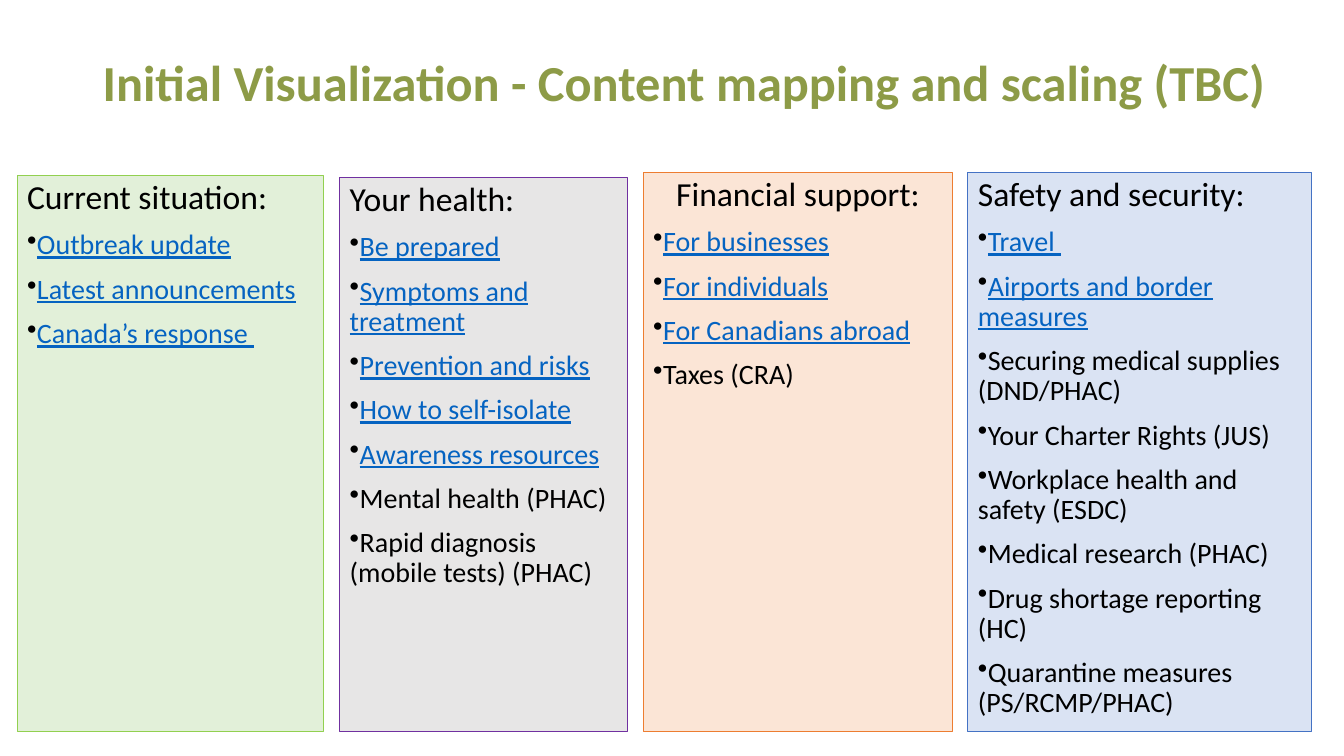
from lxml import etree
from pptx import Presentation
from pptx.dml.color import RGBColor
from pptx.enum.shapes import MSO_SHAPE
from pptx.enum.text import MSO_ANCHOR, PP_ALIGN
from pptx.oxml.ns import qn
from pptx.util import Inches, Pt

RECTANGLE = MSO_SHAPE.RECTANGLE
TOP, MIDDLE = MSO_ANCHOR.TOP, MSO_ANCHOR.MIDDLE
LEFT, CENTER = PP_ALIGN.LEFT, PP_ALIGN.CENTER

COLORS = {
    "title": "8D9B47", "text": "000000", "link": "0563C1",
    "green": "E2F0D9", "green line": "92D050",
    "gray": "E7E6E6", "gray line": "7030A0",
    "orange": "FBE5D6", "orange line": "ED7D31",
    "blue": "DAE3F3", "blue line": "4472C4",
}
FONTS = {
    "title": {"size": Pt(36), "bold": True},
    "heading": {"size": Pt(24)},
    "item": {"size": Pt(20)},
    "link": {"size": Pt(20), "underline": True},
}
COLUMN_BOTTOM = 7.26

# Each column: left, top, width, color, heading, heading alignment, linked topics, planned topics
COLUMNS = [
    (0.17, 1.74, 3.04, "green", "Current situation:", LEFT,
     ["Outbreak update", "Latest announcements", "Canada’s response "], []),
    (3.37, 1.76, 2.85, "gray", "Your health:", LEFT,
     ["Be prepared", "Symptoms and treatment", "Prevention and risks",
      "How to self-isolate", "Awareness resources"],
     ["Mental health (PHAC)", "Rapid diagnosis (mobile tests) (PHAC)"]),
    (6.38, 1.71, 3.07, "orange", "Financial support:", CENTER,
     ["For businesses", "For individuals", "For Canadians abroad"],
     ["Taxes (CRA)"]),
    (9.6, 1.71, 3.41, "blue", "Safety and security:", LEFT,
     ["Travel ", "Airports and border measures"],
     ["Securing medical supplies (DND/PHAC)", "Your Charter Rights (JUS)",
      "Workplace health and safety (ESDC)", "Medical research (PHAC)",
      "Drug shortage reporting (HC)", "Quarantine measures (PS/RCMP/PHAC)"]),
]


def color(name):
    return RGBColor.from_string(COLORS[name])


def set_frame(frame, anchor):
    frame.word_wrap = True
    frame.vertical_anchor = anchor


def write(para, text, font, color_name, align=LEFT):
    para.alignment = align
    para.line_spacing = 0.9
    span = para.add_run()
    span.text = text
    span.font.name = "Calibri"
    span.font.color.rgb = color(color_name)
    for name, value in FONTS[font].items():
        setattr(span.font, name, value)


def add_bullet(para):
    para.space_before = Pt(10)
    properties = para._p.get_or_add_pPr()
    properties.set("marL", "0")
    properties.set("indent", str(Inches(-0.14)))
    bullet_color = etree.SubElement(properties, qn("a:buClr"))
    etree.SubElement(bullet_color, qn("a:srgbClr"), val=COLORS["text"])
    etree.SubElement(properties, qn("a:buChar"), char="•")


def add_title(page, left, top, width, height):
    box = page.shapes.add_textbox(Inches(left), Inches(top), Inches(width), Inches(height))
    set_frame(box.text_frame, MIDDLE)
    write(box.text_frame.paragraphs[0],
          "Initial Visualization - Content mapping and scaling (TBC)", "title", "title")


def add_column(page, left, top, width, fill, heading, align, linked, planned):
    """Draw one theme panel: a heading, linked topics, then planned topics."""
    box = page.shapes.add_shape(RECTANGLE, Inches(left), Inches(top),
                                Inches(width), Inches(COLUMN_BOTTOM - top))
    box.shadow.inherit = False
    box.fill.solid()
    box.fill.fore_color.rgb = color(fill)
    box.line.color.rgb = color(f"{fill} line")
    box.line.width = Pt(0.75)
    frame = box.text_frame
    set_frame(frame, TOP)
    write(frame.paragraphs[0], heading, "heading", "text", align)
    for topics, font, color_name in ((linked, "link", "link"), (planned, "item", "text")):
        for topic in topics:
            para = frame.add_paragraph()
            write(para, topic, font, color_name)
            add_bullet(para)


def main():
    deck = Presentation()
    deck.slide_width, deck.slide_height = Inches(13.33), Inches(7.5)
    page = deck.slides.add_slide(deck.slide_layouts[6])
    add_title(page, 0.92, 0.4, 11.75, 0.89)
    for column in COLUMNS:
        add_column(page, *column)
    deck.save("out.pptx")


if __name__ == "__main__":
    main()
